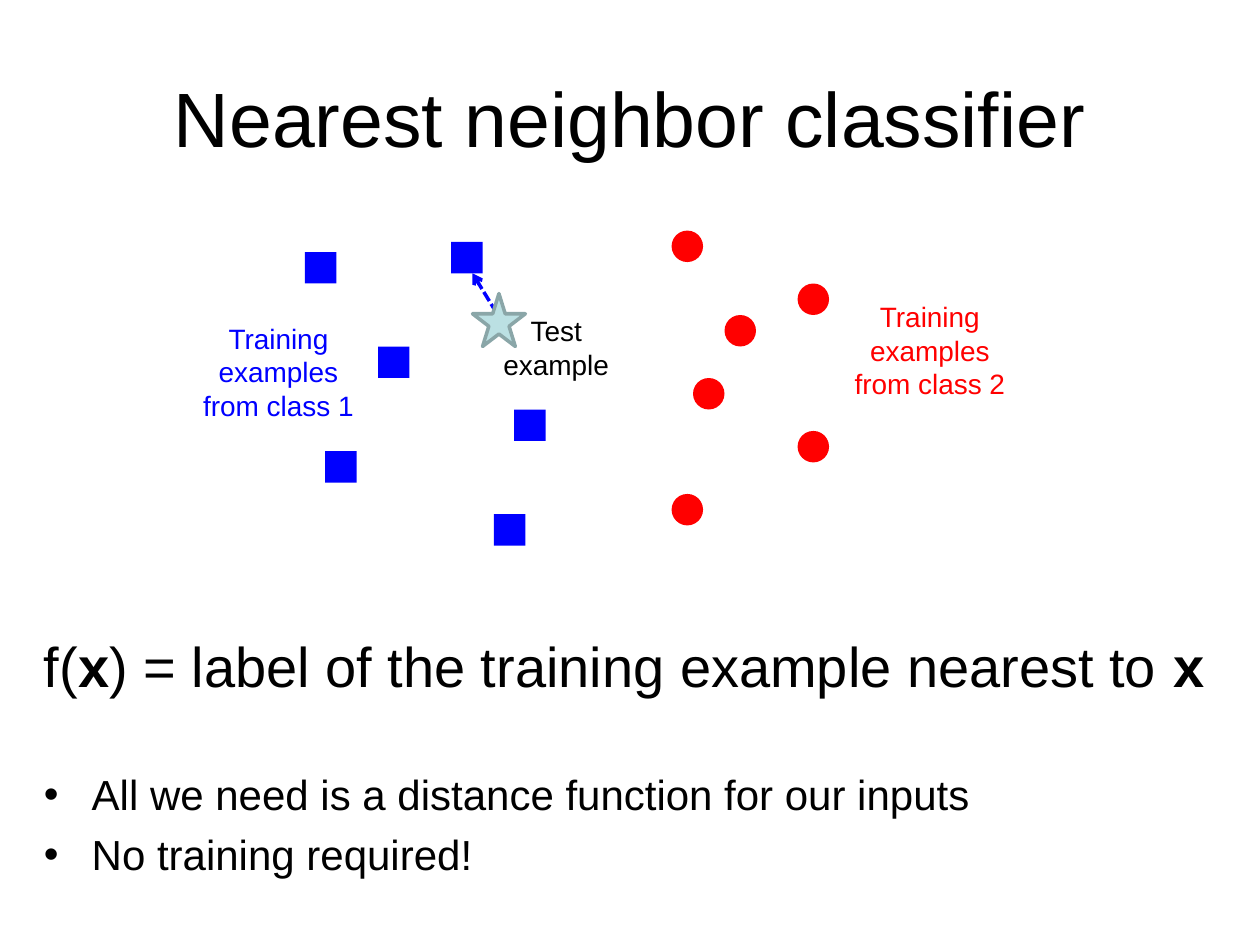
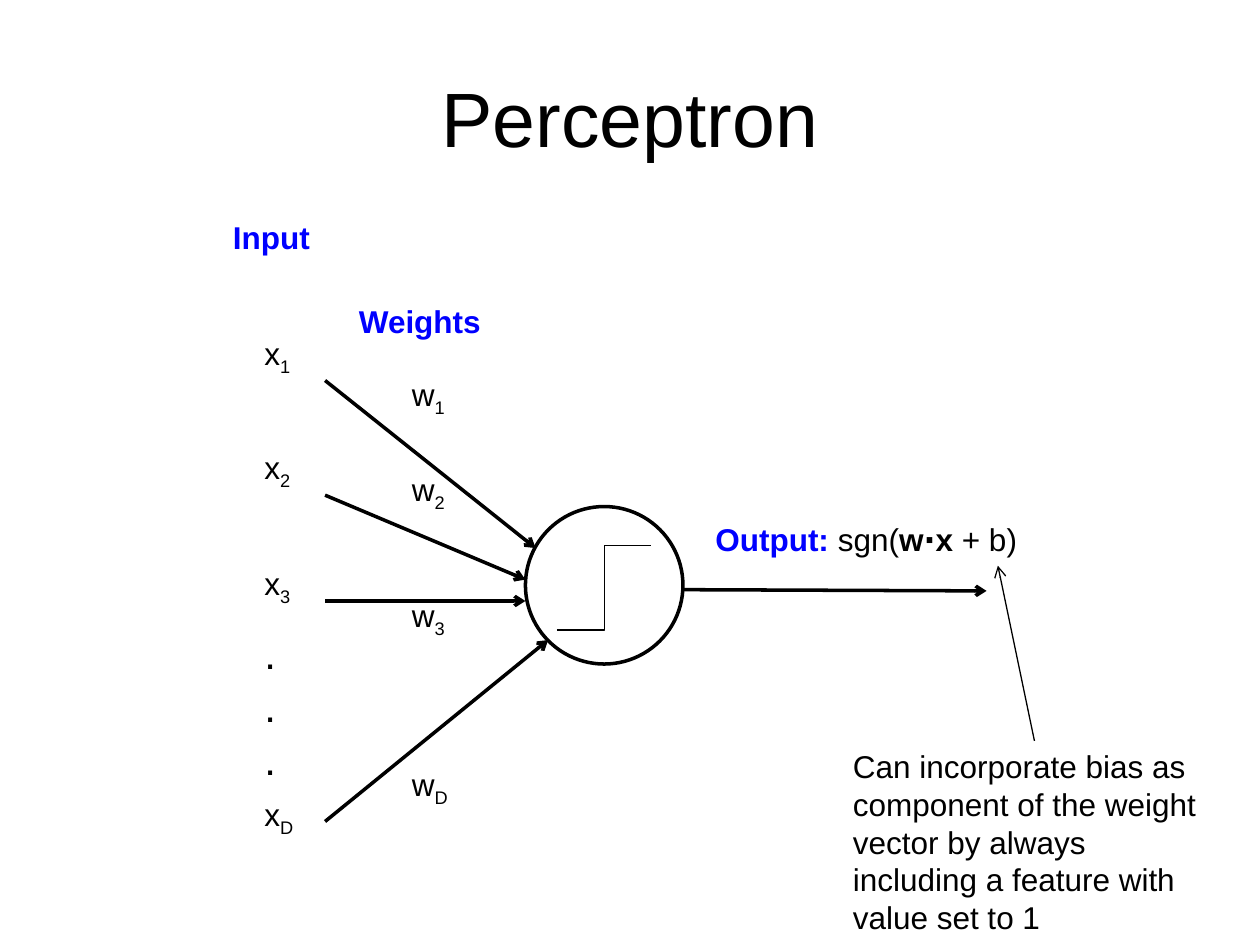
from pptx import Presentation
from pptx.dml.color import RGBColor
from pptx.enum.dml import MSO_LINE
from pptx.enum.shapes import MSO_CONNECTOR, MSO_SHAPE
from pptx.enum.text import MSO_ANCHOR, MSO_AUTO_SIZE, PP_ALIGN
from pptx.oxml.ns import qn
from pptx.util import Inches, Pt
from lxml.etree import SubElement

BLACK, BLUE, RED = "000000", "0000FF", "FF0000"
STAR_FILL, STAR_LINE = "BBE0E3", "8AA6A8"
MARKER_SIZE = 0.25
BOLD = {"bold": True}
SUBSCRIPT = {"baseline": -25000}


def color(hex_string):
    return RGBColor.from_string(hex_string)


class Deck:
    font_name = "Arial"

    def __init__(self):
        self.presentation = Presentation()
        self.presentation.slide_width = Inches(10)
        self.presentation.slide_height = Inches(7.5)
        self.slide = None

    def new_slide(self, title):
        self.slide = self.presentation.slides.add_slide(self.presentation.slide_layouts[6])
        frame = self.text((0.5, 0.3, 9, 1.25), [[(title, {})]], size=44,
                          align=PP_ALIGN.CENTER, grow=False)
        frame.vertical_anchor = MSO_ANCHOR.MIDDLE

    def text(self, box, paragraphs, size=18, ink=BLACK, align=PP_ALIGN.LEFT,
             wrap=True, grow=True):
        """Add a text box; each paragraph is a list of (text, format) runs."""
        frame = self.slide.shapes.add_textbox(*map(Inches, box)).text_frame
        frame.word_wrap = wrap
        frame.auto_size = MSO_AUTO_SIZE.SHAPE_TO_FIT_TEXT if grow else MSO_AUTO_SIZE.NONE
        for index, runs in enumerate(paragraphs):
            paragraph = frame.paragraphs[0] if index == 0 else frame.add_paragraph()
            paragraph.alignment = align
            for content, changes in runs:
                self.run(paragraph, content, {"size": size, "color": ink, **changes})
        return frame

    def run(self, paragraph, content, style):
        run = paragraph.add_run()
        run.text = content
        run.font.name = self.font_name
        for name, value in style.items():
            if name == "color":
                run.font.color.rgb = color(value)
            elif name == "baseline":
                run._r.get_or_add_rPr().set("baseline", str(value))
            else:
                setattr(run.font, name, Pt(value) if name == "size" else value)

    def bullet(self, paragraph, indent, space_before):
        paragraph.space_before = Pt(space_before)
        properties = paragraph._p.get_or_add_pPr()
        properties.set("marL", str(Inches(indent)))
        properties.set("indent", str(-Inches(indent)))
        SubElement(properties, qn("a:buFont")).set("typeface", self.font_name)
        SubElement(properties, qn("a:buChar")).set("char", "•")

    def shape(self, kind, box, fill=None, line=None):
        shape = self.slide.shapes.add_shape(kind, *map(Inches, box))
        shape.shadow.inherit = False
        if fill:
            shape.fill.solid()
            shape.fill.fore_color.rgb = color(fill)
        else:
            shape.fill.background()
        if line:
            shape.line.color.rgb = color(line)
            shape.line.width = Pt(2)
        else:
            shape.line.fill.background()

    def connector(self, start, end, ink=BLACK, width=2, dash=None, arrow=True,
                  kind=MSO_CONNECTOR.STRAIGHT):
        connector = self.slide.shapes.add_connector(kind, *map(Inches, (*start, *end)))
        connector.line.color.rgb = color(ink)
        connector.line.width = Pt(width)
        if dash:
            connector.line.dash_style = dash
        if arrow:
            SubElement(connector.line._get_or_add_ln(), qn("a:tailEnd")).set("type", "arrow")
        SubElement(connector._element.spPr, qn("a:effectLst"))


def build_nearest_neighbor(deck):
    deck.new_slide("Nearest neighbor classifier")
    frame = deck.text((0.25, 4.96, 9.5, 1.45), [
        [("f(", {"size": 32}), ("x", {"size": 32, **BOLD}),
         (") = label of the training example nearest to ", {"size": 32}),
         ("x", {"size": 32, **BOLD})],
        [("All we need is a distance function for our inputs", {})],
        [("No training required!", {})],
    ], size=24, grow=False)
    for paragraph, space_before in zip(frame.paragraphs[1:], (40, 5.5)):
        deck.bullet(paragraph, 0.38, space_before)

    squares = [(2.42, 2), (3, 2.75), (3.58, 1.92), (2.58, 3.58), (4.08, 3.25), (3.92, 4.08)]
    circles = [(6.33, 2.25), (5.5, 3), (6.33, 3.42), (5.33, 1.83), (5.75, 2.5), (5.33, 3.92)]
    for kind, fill, corners in ((MSO_SHAPE.RECTANGLE, BLUE, squares),
                                (MSO_SHAPE.OVAL, RED, circles)):
        for corner in corners:
            deck.shape(kind, (*corner, MARKER_SIZE, MARKER_SIZE), fill)

    for box, label, ink in (
        ((3.83, 2.44, 1.17, 0.64), "Test example", BLACK),
        ((1.5, 2.5, 1.42, 0.91), "Training examples from class 1", BLUE),
        ((6.67, 2.33, 1.42, 0.91), "Training examples from class 2", RED),
    ):
        deck.text(box, [[(label, {})]], size=16, ink=ink, align=PP_ALIGN.CENTER)
    deck.connector((4, 2.58), (3.75, 2.17), BLUE, dash=MSO_LINE.SQUARE_DOT)
    deck.shape(MSO_SHAPE.STAR_5_POINT, (3.75, 2.33, 0.42, 0.42), STAR_FILL, STAR_LINE)


def build_perceptron(deck):
    deck.new_slide("Perceptron")
    deck.shape(MSO_SHAPE.OVAL, (4.17, 4.02, 1.25, 1.25), line=BLACK)

    # subscript, top of input, top of weight, arrow start height, arrow end
    for subscript, input_top, weight_top, start_y, end in (
        ("1", 2.6, 2.93, 3.02, (4.25, 4.35)),
        ("2", 3.51, 3.68, 3.93, (4.17, 4.6)),
        ("3", 4.43, 4.68, 4.77, (4.17, 4.77)),
        ("D", 6.26, 6.02, 6.52, (4.35, 5.08)),
    ):
        deck.connector((2.58, start_y), end)
        for letter, left, top in (("x", 2, input_top), ("w", 3.17, weight_top)):
            deck.text((left, top, 0.49, 0.4), [[(letter, {}), (subscript, SUBSCRIPT)]],
                      wrap=False)
    dots = deck.text((2, 4.93, 0.29, 1.31), [[(".", {})]] * 3, size=24, wrap=False)
    for paragraph in dots.paragraphs[1:]:
        paragraph.space_before = Pt(1.5)

    for box, heading in (((1.75, 1.68, 0.82, 0.4), "Input"),
                         ((2.75, 2.35, 1.18, 0.4), "Weights")):
        deck.text(box, [[(heading, BOLD)]], ink=BLUE, wrap=False)

    deck.connector((4.42, 5), (5.17, 4.33), width=0.75, arrow=False,
                   kind=MSO_CONNECTOR.ELBOW)
    deck.connector((5.42, 4.68), (7.83, 4.69))
    deck.text((5.58, 4.08, 2.6, 0.4), [[
        ("Output: ", {"color": BLUE, **BOLD}), ("sgn(", {}), ("w⋅x ", BOLD), ("+ b)", {}),
    ]], wrap=False)
    deck.text((6.67, 5.88, 3.08, 1.62), [[
        ("Can incorporate bias as component of the weight vector by always "
         "including a feature with value set to 1", {}),
    ]])
    deck.connector((8.21, 5.88), (7.92, 4.49), width=0.75)


def main():
    deck = Deck()
    build_nearest_neighbor(deck)
    build_perceptron(deck)
    deck.presentation.save("out.pptx")


if __name__ == "__main__":
    main()
